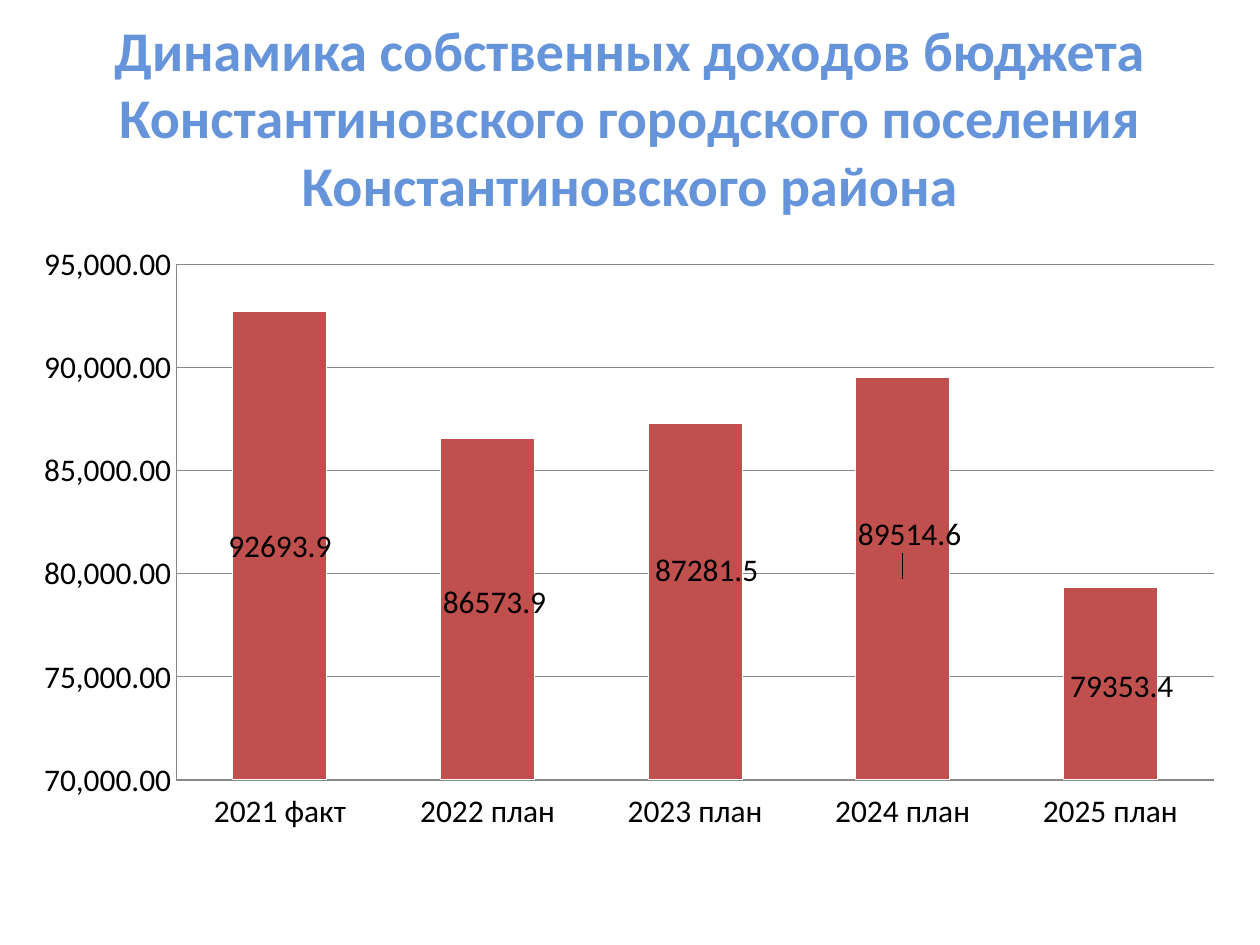
"""Build a slide with a column chart of the settlement's own budget revenues."""
from lxml import etree
from pptx import Presentation
from pptx import util as u
from pptx.chart import data
from pptx.dml.color import RGBColor
from pptx.enum import chart as ch, text
from pptx.oxml import parse_xml
from pptx.oxml.ns import nsdecls, qn

THEME = dict(font="Calibri", title="6594DA", bar="C0504D", edge="FFFFFF",
             ink="000000", grid="878787", title_size=32, chart_size=18)
REVENUES = {"2021 факт": 92693.9, "2022 план": 86573.9, "2023 план": 87281.5,
            "2024 план": 89514.6, "2025 план": 79353.4}
LABEL_SHIFTS = [(0, 0), (0.006, -0.01), (0.01, -0.05), (0.006, -0.07), (0.01, 0.005)]
PLOT = dict(x=0.11, y=0.031, w=0.89, h=0.812)


def style(font, size, color, bold=False):
    font.name, font.size, font.bold = THEME["font"], u.Pt(size), bold
    font.color.rgb = RGBColor.from_string(THEME[color])


def layout(modes="", **shares):
    xml = modes + "".join(f'<c:{k} val="{v}"/>' for k, v in shares.items())
    return parse_xml(f'<c:layout {nsdecls("c")}><c:manualLayout>{xml}</c:manualLayout></c:layout>')


prs = Presentation()
prs.slide_width, prs.slide_height = u.Inches(10), u.Inches(7.5)
W, H = prs.slide_width, prs.slide_height
s = prs.slides.add_slide(prs.slide_layouts[5])

sp = s.shapes.title
sp.left, sp.top, sp.width, sp.height = int(W * 0.05), int(H * 0.04), int(W * 0.9), int(H / 6)
tf = sp.text_frame
tf.vertical_anchor = text.MSO_ANCHOR.MIDDLE
p = tf.paragraphs[0]
p.alignment = text.PP_ALIGN.CENTER
r = p.add_run()
r.text = "Динамика собственных доходов бюджета Константиновского городского поселения Константиновского района"
style(r.font, THEME["title_size"], "title", bold=True)

cd = data.CategoryChartData()
cd.categories = list(REVENUES)
cd.add_series("Series 1", list(REVENUES.values()))
chart = s.shapes.add_chart(ch.XL_CHART_TYPE.COLUMN_STACKED, int(W * 0.035), int(H * 0.259),
                           int(W * 0.929), int(H * 0.672), cd).chart
chart.has_legend = chart.has_title = False
style(chart.font, THEME["chart_size"], "ink")

plot = chart.plots[0]
plot.gap_width, plot.overlap, plot.vary_by_categories = 121, 100, False
area = chart._chartSpace.chart.plotArea
for old in area.findall(qn("c:layout")):
    area.remove(old)
modes = '<c:layoutTarget val="inner"/><c:xMode val="edge"/><c:yMode val="edge"/>'
area.insert(0, layout(modes, **PLOT))

cat, val = chart.category_axis, chart.value_axis
val.minimum_scale, val.maximum_scale, val.major_unit = 70000, 95000, 5000
val.has_major_gridlines = True
val.tick_labels.number_format, val.tick_labels.number_format_is_linked = "#,##0.00", False
cat.tick_label_position = ch.XL_TICK_LABEL_POSITION.LOW
for axis in (cat, val):
    axis.major_tick_mark = axis.minor_tick_mark = ch.XL_TICK_MARK.NONE
for fmt in (cat.format, val.format, val.major_gridlines.format):
    fmt.line.width = u.Pt(0.75)
    fmt.line.color.rgb = RGBColor.from_string(THEME["grid"])

bars = plot.series[0]
bars.format.fill.solid()
bars.format.fill.fore_color.rgb = RGBColor.from_string(THEME["bar"])
bars.format.line.color.rgb = RGBColor.from_string(THEME["edge"])
bars.data_labels.show_value = True
for i, (x, y) in enumerate(LABEL_SHIFTS):
    label = bars.points[i].data_label
    label.position = ch.XL_LABEL_POSITION.CENTER
    style(label.font, THEME["chart_size"], "ink")
    dlbl = bars._element.xpath(f"c:dLbls/c:dLbl[c:idx/@val='{i}']")[0]
    dlbl.insert(1, layout(x=x, y=y))

prs.save("out.pptx")
